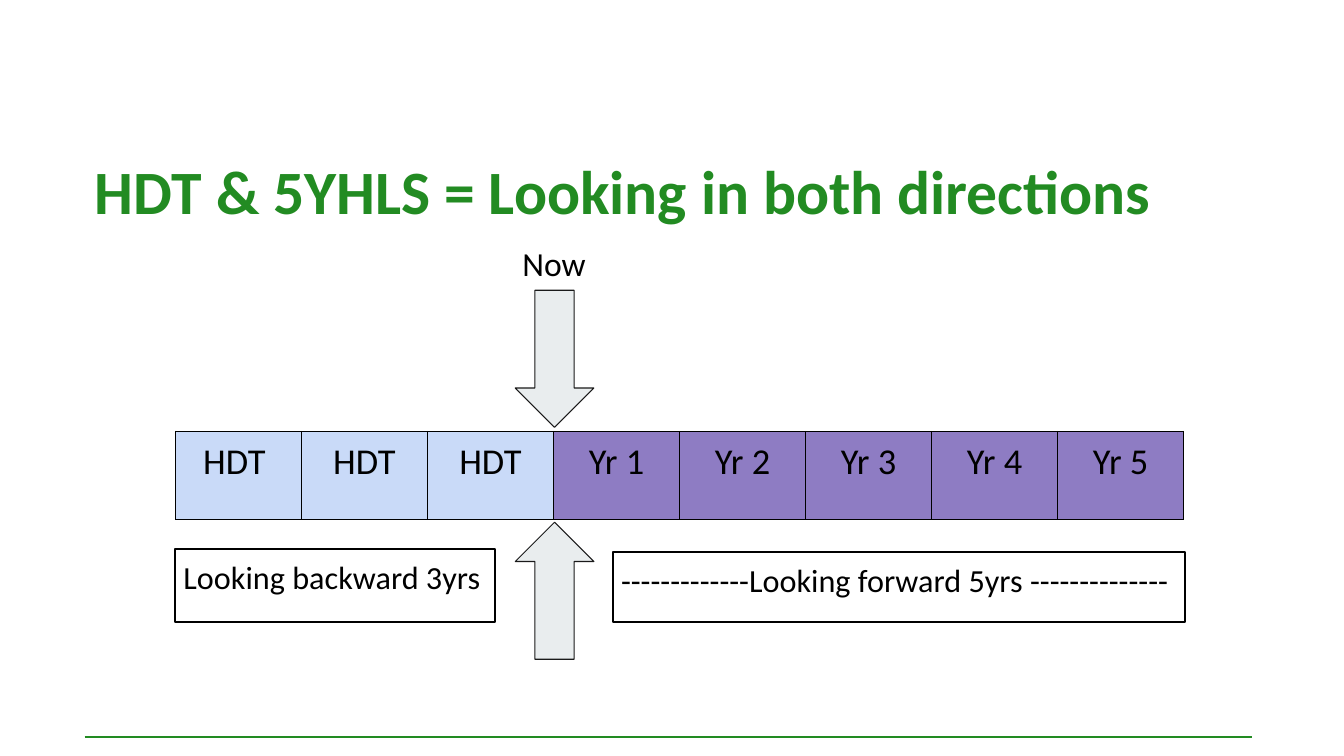
"""Builds a slide with a timeline of three past and five coming years."""
from lxml import etree
from pptx import Presentation
from pptx import util as u
from pptx.dml.color import RGBColor
from pptx.enum import shapes, text
from pptx.oxml.ns import qn

GREEN = RGBColor(0x22, 0x8B, 0x22)
BLACK = RGBColor(0, 0, 0)
ARROW_FILL = RGBColor(0xE9, 0xED, 0xEE)
ARROW_LINE = RGBColor(0x1A, 0x1A, 0x1A)
PAST = RGBColor(0xC9, 0xDA, 0xF8)
FUTURE = RGBColor(0x8E, 0x7C, 0xC3)

YEARS = [("HDT ", PAST)] + [("HDT", PAST)] * 2 + [(f"Yr {n}", FUTURE) for n in range(1, 6)]
YEAR_WIDTH = 1.25
TIMELINE_LEFT = 1.74
INSET = u.Inches(0.08)


def box(left, top, width, height):
    return [u.Inches(length) for length in (left, top, width, height)]


def write(frame, words, size, color=BLACK, bold=False, align=text.PP_ALIGN.LEFT):
    frame.text = words
    paragraph = frame.paragraphs[0]
    paragraph.alignment = align
    font_format = {"name": "Calibri", "size": u.Pt(size), "bold": bold}
    for key, value in font_format.items():
        setattr(paragraph.runs[0].font, key, value)
    paragraph.runs[0].font.color.rgb = color


def set_frame(frame, anchor=text.MSO_ANCHOR.TOP, inset=INSET):
    frame_format = {"word_wrap": True, "auto_size": text.MSO_AUTO_SIZE.NONE,
                    "vertical_anchor": anchor}
    frame_format.update({f"margin_{side}": inset for side in ("left", "top", "right", "bottom")})
    for key, value in frame_format.items():
        setattr(frame, key, value)


def add_heading(slide, words):
    heading = slide.shapes.title
    heading.left, heading.top, heading.width, heading.height = box(0.84, 1.29, 11.5, 1.28)
    set_frame(heading.text_frame, text.MSO_ANCHOR.MIDDLE, u.Inches(0.1))
    write(heading.text_frame, words, 44, GREEN, True)
    heading.text_frame.paragraphs[0].line_spacing = 0.9


def add_footer_rule(slide):
    left, right, y = (u.Inches(length) for length in (0.84, 12.42, 7.31))
    rule = slide.shapes.add_connector(shapes.MSO_CONNECTOR.STRAIGHT, left, y, right, y)
    rule.line.color.rgb = GREEN
    rule.line.width = u.Pt(1.5)
    etree.SubElement(rule._element.spPr, qn("a:effectLst"))


def add_borders(cell):
    properties = cell._tc.get_or_add_tcPr()
    for index, side in enumerate(("lnL", "lnR", "lnT", "lnB")):
        border = etree.Element(qn(f"a:{side}"), w=str(u.Pt(0.75)))
        fill = etree.SubElement(border, qn("a:solidFill"))
        etree.SubElement(fill, qn("a:srgbClr"), val=str(BLACK))
        properties.insert(index, border)


def add_timeline(slide):
    place = box(TIMELINE_LEFT, 4.28, YEAR_WIDTH * len(YEARS), 0.87)
    timeline = slide.shapes.add_table(1, len(YEARS), *place).table
    for column, (label, color) in enumerate(YEARS):
        timeline.columns[column].width = u.Inches(YEAR_WIDTH)
        cell = timeline.cell(0, column)
        for side in ("left", "top", "right", "bottom"):
            setattr(cell, f"margin_{side}", INSET)
        write(cell.text_frame, label, 26, align=text.PP_ALIGN.CENTER)
        cell.fill.solid()
        cell.fill.fore_color.rgb = color
        add_borders(cell)


def add_now_arrow(slide, top, rotation):
    arrow = slide.shapes.add_shape(shapes.MSO_SHAPE.DOWN_ARROW, *box(5.11, top, 0.78, 1.36))
    arrow.rotation = rotation
    arrow.shadow.inherit = False
    arrow.fill.solid()
    arrow.fill.fore_color.rgb = ARROW_FILL
    arrow.line.color.rgb = ARROW_LINE
    arrow.line.width = u.Pt(0.75)


def add_now_label(slide):
    label = slide.shapes.add_textbox(*box(4.67, 2.33, 1.65, 0.43)).text_frame
    set_frame(label)
    write(label, "Now", 24, align=text.PP_ALIGN.CENTER)


def add_direction(slide, words, place):
    direction = slide.shapes.add_shape(shapes.MSO_SHAPE.RECTANGLE, *place)
    direction.shadow.inherit = False
    direction.fill.background()
    direction.line.color.rgb = BLACK
    direction.line.width = u.Pt(1.5)
    set_frame(direction.text_frame)
    write(direction.text_frame, words, 23)


def main():
    deck = Presentation()
    deck.slide_width, deck.slide_height = u.Inches(13.33), u.Inches(7.5)
    slide = deck.slides.add_slide(deck.slide_layouts[5])
    add_heading(slide, "HDT & 5YHLS = Looking in both directions")
    add_footer_rule(slide)
    add_timeline(slide)
    for top, rotation in ((2.88, 0), (5.18, 180)):
        add_now_arrow(slide, top, rotation)
    add_now_label(slide)
    add_direction(slide, "Looking backward 3yrs", box(TIMELINE_LEFT, 5.45, 3.17, 0.72))
    add_direction(slide, "-------------Looking forward 5yrs --------------",
                  box(6.08, 5.48, 5.67, 0.69))
    deck.save("out.pptx")


if __name__ == "__main__":
    main()
